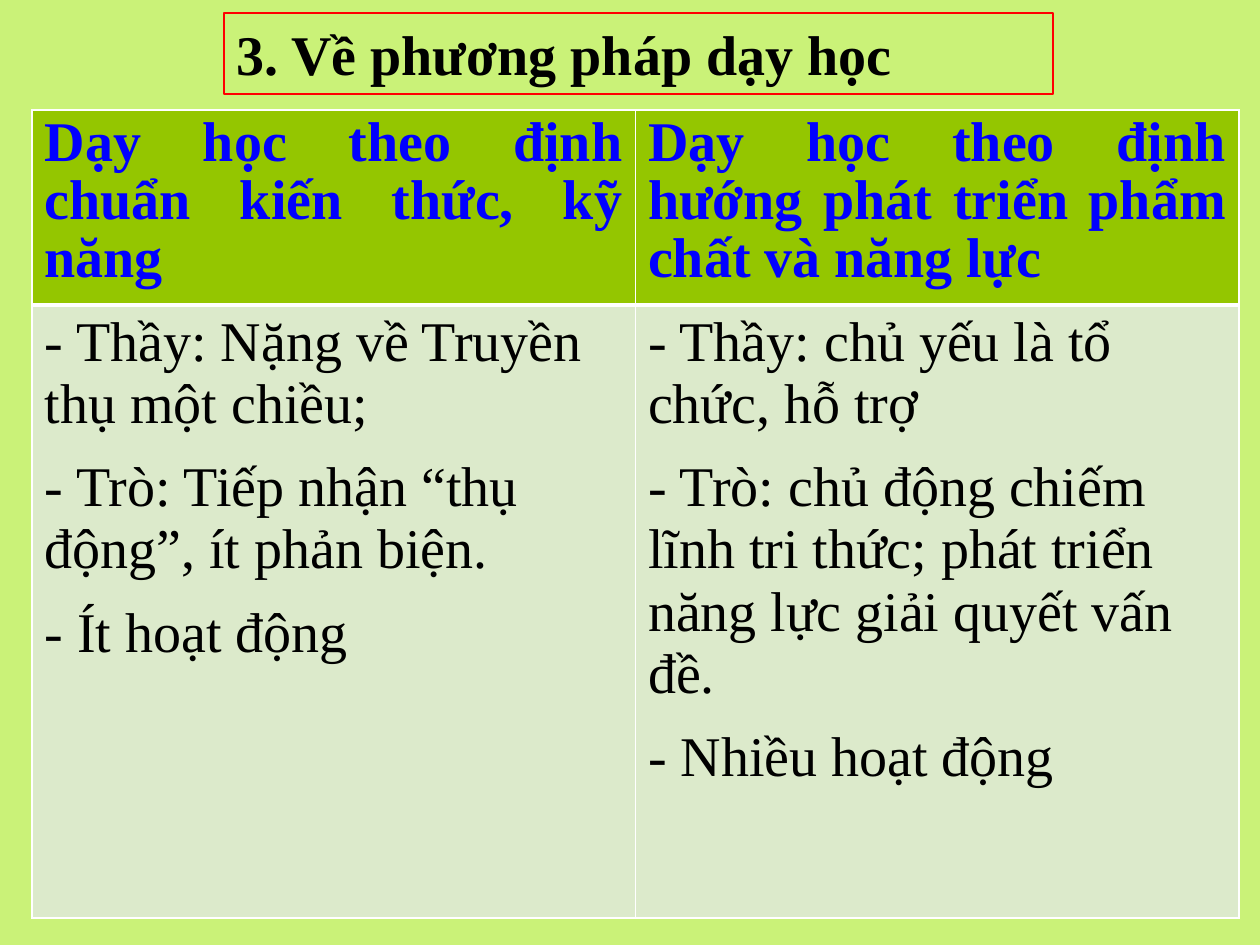
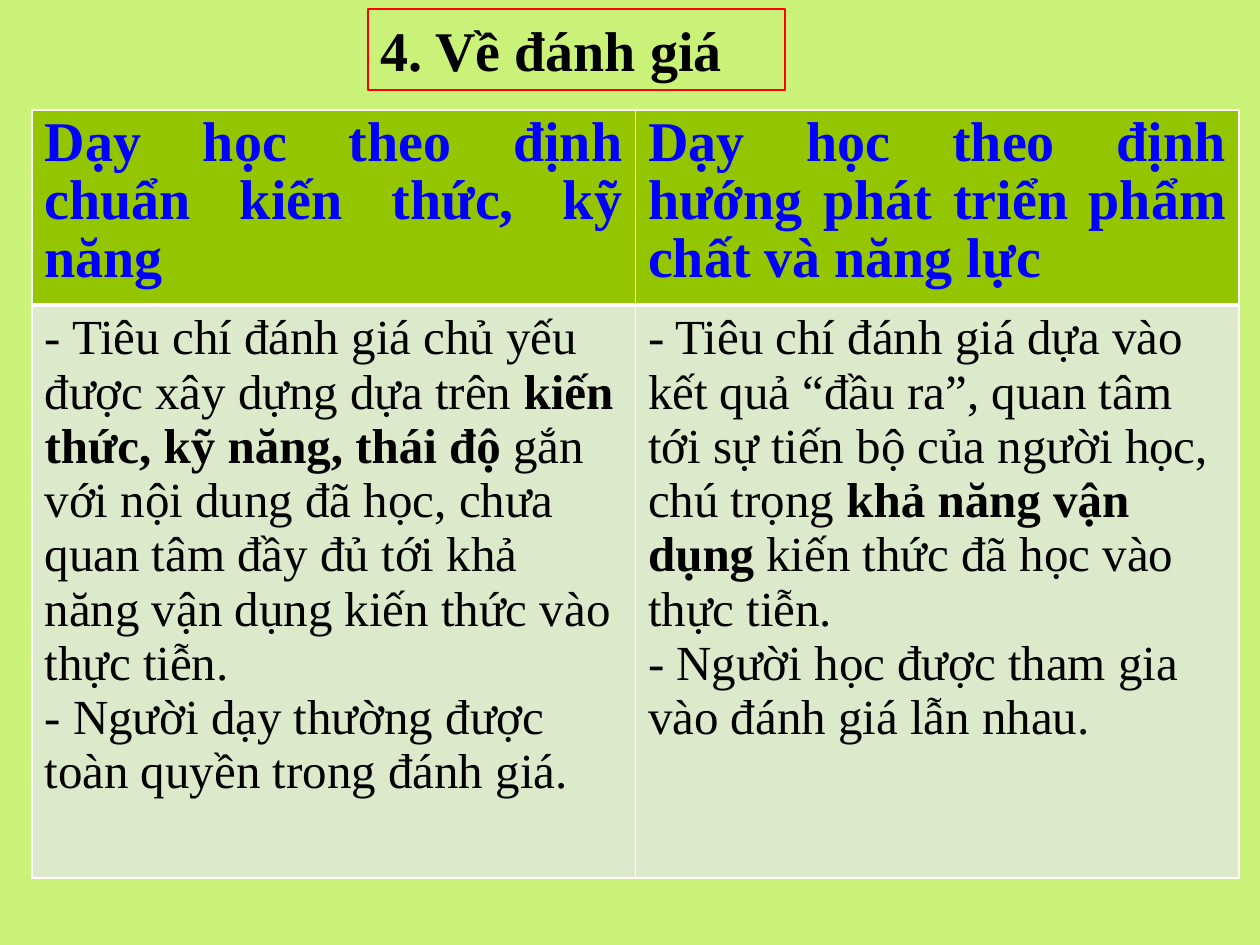
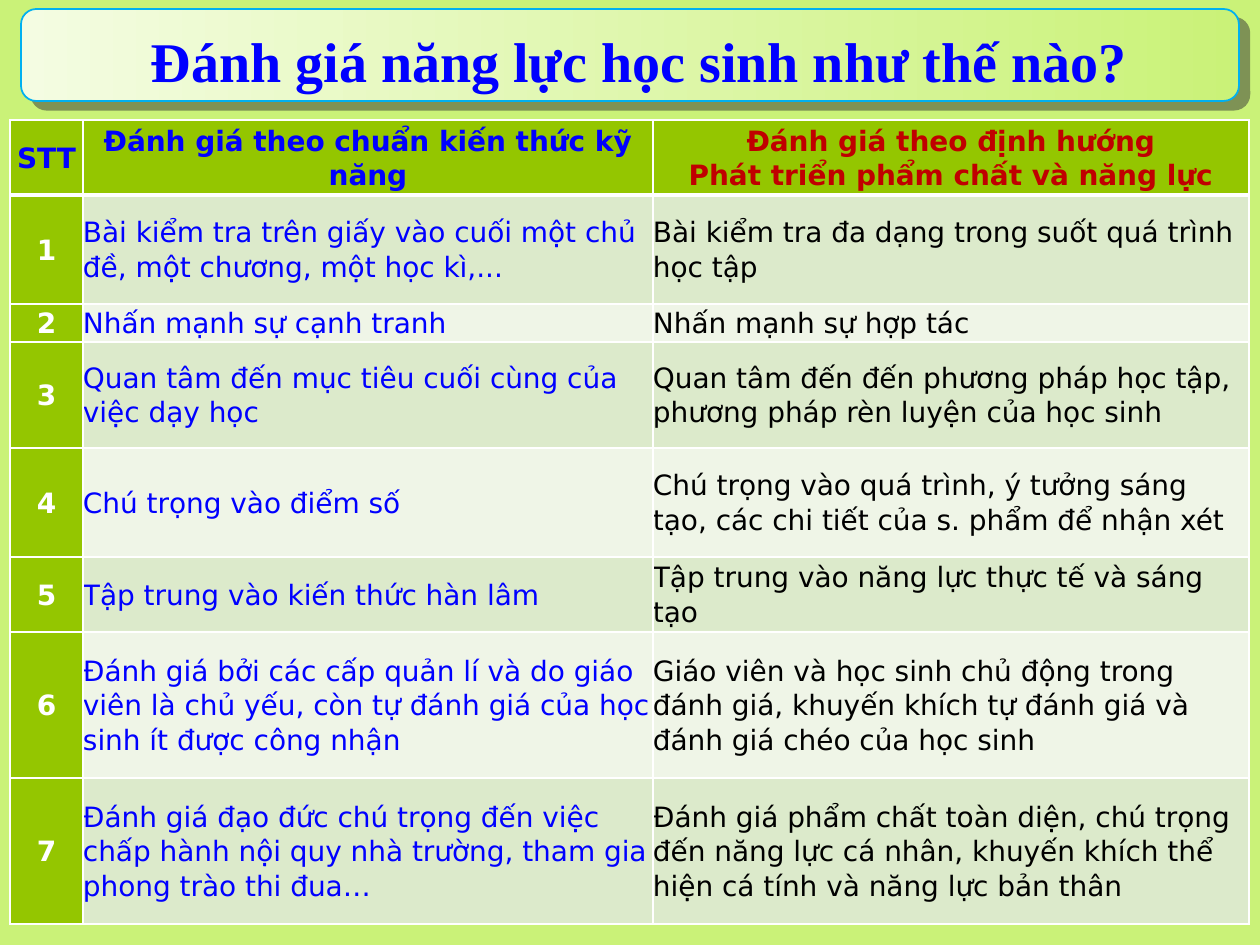
from lxml import etree
from pptx import Presentation
from pptx.dml.color import RGBColor
from pptx.enum.shapes import MSO_SHAPE
from pptx.enum.text import MSO_ANCHOR, MSO_AUTO_SIZE, PP_ALIGN
from pptx.oxml.ns import qn
from pptx.util import Pt

RECT, ROUNDED = MSO_SHAPE.RECTANGLE, MSO_SHAPE.ROUNDED_RECTANGLE
MIDDLE, GROW = MSO_ANCHOR.MIDDLE, MSO_AUTO_SIZE.SHAPE_TO_FIT_TEXT
LEFT, CENTER, JUSTIFY = PP_ALIGN.LEFT, PP_ALIGN.CENTER, PP_ALIGN.JUSTIFY

PX = 914400 // 126
SERIF, SANS = "Times New Roman", "DejaVu Sans"
COLORS = {
    "page": "CAF278", "pale": "F4FCE2", "head": "94C600", "band": "DCEACB",
    "light_band": "EFF5E7", "white": "FFFFFF", "black": "000000",
    "blue": "0000FF", "dark_red": "C00000", "red": "FF0000",
    "sky": "00B0F0", "shadow": "333333",
}
RGB = {name: RGBColor.from_string(value) for name, value in COLORS.items()}


def write(frame, lines, font, size, color, bold=False, align=LEFT,
          spacing=None, before=0, after=0):
    """Fill a frame, one paragraph per line; *stars* mark bold words."""
    frame.word_wrap = True
    for number, line in enumerate(lines):
        para = frame.paragraphs[0] if number == 0 else frame.add_paragraph()
        para.alignment = align
        para.line_spacing = spacing
        para.space_before, para.space_after = Pt(before), Pt(after)
        for part, words in enumerate(line.split("*")):
            span = para.add_run()
            span.text = words
            span.font.name, span.font.size = font, Pt(size)
            span.font.bold = bold or part % 2 == 1
            span.font.color.rgb = RGB[color]


def paint_cell(cell, fill, row):
    """Give a cell its fill and white borders, thick below the header."""
    widths = {"lnL": 1, "lnR": 1, "lnT": 3 if row == 1 else 1,
              "lnB": 3 if row == 0 else 1}
    properties = cell._tc.get_or_add_tcPr()
    for side, width in widths.items():
        line = etree.SubElement(properties, qn("a:" + side), w=str(Pt(width)))
        solid = etree.SubElement(line, qn("a:solidFill"))
        etree.SubElement(solid, qn("a:srgbClr"), val=COLORS["white"])
    cell.fill.solid()
    cell.fill.fore_color.rgb = RGB[fill]


deck = Presentation()
deck.slide_width, deck.slide_height = 1260 * PX, 945 * PX
pages = []
for _ in range(3):
    page = deck.slides.add_slide(deck.slide_layouts[6])
    page.background.fill.solid()
    page.background.fill.fore_color.rgb = RGB["page"]
    pages.append(page)

# Slides 1 and 2: two teaching approaches side by side
APPROACHES = ["Dạy học theo định chuẩn kiến thức, kỹ năng",
              "Dạy học theo định hướng phát triển phẩm chất và năng lực"]
comparisons = [
    {"title": "3. Về phương pháp dạy học", "box": (224, 13, 829, 81),
     "body_height": 613, "size": 32, "gap": 6,
     "columns": [
         ["- Thầy: Nặng về Truyền thụ một chiều;",
          "- Trò: Tiếp nhận “thụ động”, ít phản biện.",
          "- Ít hoạt động"],
         ["- Thầy: chủ yếu là tổ chức, hỗ trợ",
          "- Trò: chủ động chiếm lĩnh tri thức; phát triển năng lực "
          "giải quyết vấn đề.",
          "- Nhiều hoạt động"]]},
    {"title": "4. Về đánh giá", "box": (368, 9, 417, 81),
     "body_height": 573, "size": 28, "gap": 0,
     "columns": [
         ["- Tiêu chí đánh giá chủ yếu được xây dựng dựa trên *kiến thức, "
          "kỹ năng, thái độ *gắn với nội dung đã học, chưa quan tâm đầy đủ "
          "tới khả năng vận dụng kiến thức vào thực tiễn.",
          "- Người dạy thường được toàn quyền trong đánh giá."],
         ["- Tiêu chí đánh giá dựa vào kết quả “đầu ra”, quan tâm tới sự "
          "tiến bộ của người học, chú trọng *khả năng vận dụng *kiến thức "
          "đã học vào thực tiễn.",
          "- Người học được tham gia vào đánh giá lẫn nhau."]]},
]
for page, topic in zip(pages, comparisons):
    heights = [195, topic["body_height"]]
    table = page.shapes.add_table(
        2, 2, 32 * PX, 110 * PX, 1207 * PX, sum(heights) * PX).table
    table.horz_banding = False
    for row, height in enumerate(heights):
        table.rows[row].height = height * PX
    for column, lines in enumerate(topic["columns"]):
        table.columns[column].width = 1207 * PX // 2
        head, body = table.cell(0, column), table.cell(1, column)
        paint_cell(head, "head", 0)
        paint_cell(body, "band", 1)
        write(head.text_frame, [APPROACHES[column]], SERIF, 32, "blue",
              bold=True, align=JUSTIFY, spacing=Pt(33))
        write(body.text_frame, lines, SERIF, topic["size"], "black",
              before=topic["gap"], after=topic["gap"])

    title = page.shapes.add_shape(RECT, *[n * PX for n in topic["box"]])
    title.shadow.inherit = False
    title.fill.background()
    title.line.color.rgb = RGB["red"]
    title.line.width = Pt(0.75)
    title.text_frame.vertical_anchor = MIDDLE
    title.text_frame.auto_size = GROW
    write(title.text_frame, [topic["title"]], SERIF, 32, "black",
          bold=True, align=JUSTIFY)

# Slide 3: banner with gradient and hard shadow
page = pages[2]
banner = page.shapes.add_shape(ROUNDED, 21 * PX, 9 * PX, 1218 * PX, 92 * PX)
banner.fill.gradient()
banner.fill.gradient_angle = 0
for stop, color in zip(banner.fill.gradient_stops, ["pale", "page"]):
    stop.color.rgb = RGB[color]
banner.line.color.rgb = RGB["sky"]
banner.line.width = Pt(1)
banner.shadow.inherit = False
effects = banner._element.spPr.find(qn("a:effectLst"))
shadow = etree.SubElement(effects, qn("a:outerShdw"), dist=str(Pt(7.8)),
                          dir=str(40 * 60000), algn="ctr", rotWithShape="0")
shade = etree.SubElement(shadow, qn("a:srgbClr"), val=COLORS["shadow"])
etree.SubElement(shade, qn("a:alpha"), val="50000")

title = page.shapes.add_textbox(20 * PX, 9 * PX, 1239 * PX, 86 * PX)
title.text_frame.auto_size = GROW
write(title.text_frame, ["Đánh giá năng lực học sinh như thế nào?"], SERIF, 32,
      "blue", bold=True, align=CENTER, spacing=Pt(45), before=6, after=6)

# Slide 3: numbered table of assessment differences
HEADINGS = [
    (["STT"], "blue"),
    (["Đánh giá theo chuẩn kiến thức kỹ năng"], "blue"),
    (["Đánh giá theo định hướng", "Phát triển phẩm chất và năng lực"],
     "dark_red"),
]
DIFFERENCES = [
    ("Bài kiểm tra trên giấy vào cuối một chủ đề, một chương, một học kì,...",
     "Bài kiểm tra đa dạng trong suốt quá trình học tập"),
    ("Nhấn mạnh sự cạnh tranh",
     "Nhấn mạnh sự hợp tác"),
    ("Quan tâm đến mục tiêu cuối cùng của việc dạy học",
     "Quan tâm đến đến phương pháp học tập, phương pháp rèn luyện của "
     "học sinh"),
    ("Chú trọng vào điểm số",
     "Chú trọng vào quá trình, ý tưởng sáng tạo, các chi tiết của s. phẩm "
     "để nhận xét"),
    ("Tập trung vào kiến thức hàn lâm",
     "Tập trung vào năng lực thực tế và sáng tạo"),
    ("Đánh giá bởi các cấp quản lí và do giáo viên là chủ yếu, còn tự "
     "đánh giá của học sinh ít được công nhận",
     "Giáo viên và học sinh chủ động trong đánh giá, khuyến khích tự "
     "đánh giá và đánh giá chéo của học sinh"),
    ("Đánh giá đạo đức chú trọng đến việc chấp hành nội quy nhà trường, "
     "tham gia phong trào thi đua…",
     "Đánh giá phẩm chất toàn diện, chú trọng đến năng lực cá nhân, "
     "khuyến khích thể hiện cá tính và năng lực bản thân"),
]
widths = [73, 570, 596]
heights = [75, 109, 38, 106, 109, 75, 146, 146]
table = page.shapes.add_table(
    len(heights), len(widths), 10 * PX, 120 * PX,
    sum(widths) * PX, sum(heights) * PX).table
table.horz_banding = False
for column, width in enumerate(widths):
    table.columns[column].width = width * PX

rows = [HEADINGS]
for number, (old, new) in enumerate(DIFFERENCES, start=1):
    rows.append([([str(number)], "white"), ([old], "blue"), ([new], "black")])
for row, cells in enumerate(rows):
    table.rows[row].height = heights[row] * PX
    for column, (lines, color) in enumerate(cells):
        cell = table.cell(row, column)
        label = row == 0 or column == 0
        band = "band" if row % 2 else "light_band"
        paint_cell(cell, "head" if label else band, row)
        cell.vertical_anchor = MIDDLE
        cell.margin_left = cell.margin_right = 0
        cell.margin_top = cell.margin_bottom = 0
        write(cell.text_frame, lines, SANS, 16, color, bold=label,
              align=CENTER if label else LEFT, spacing=1.07,
              after=0 if label else 3.8)

deck.save("out.pptx")
